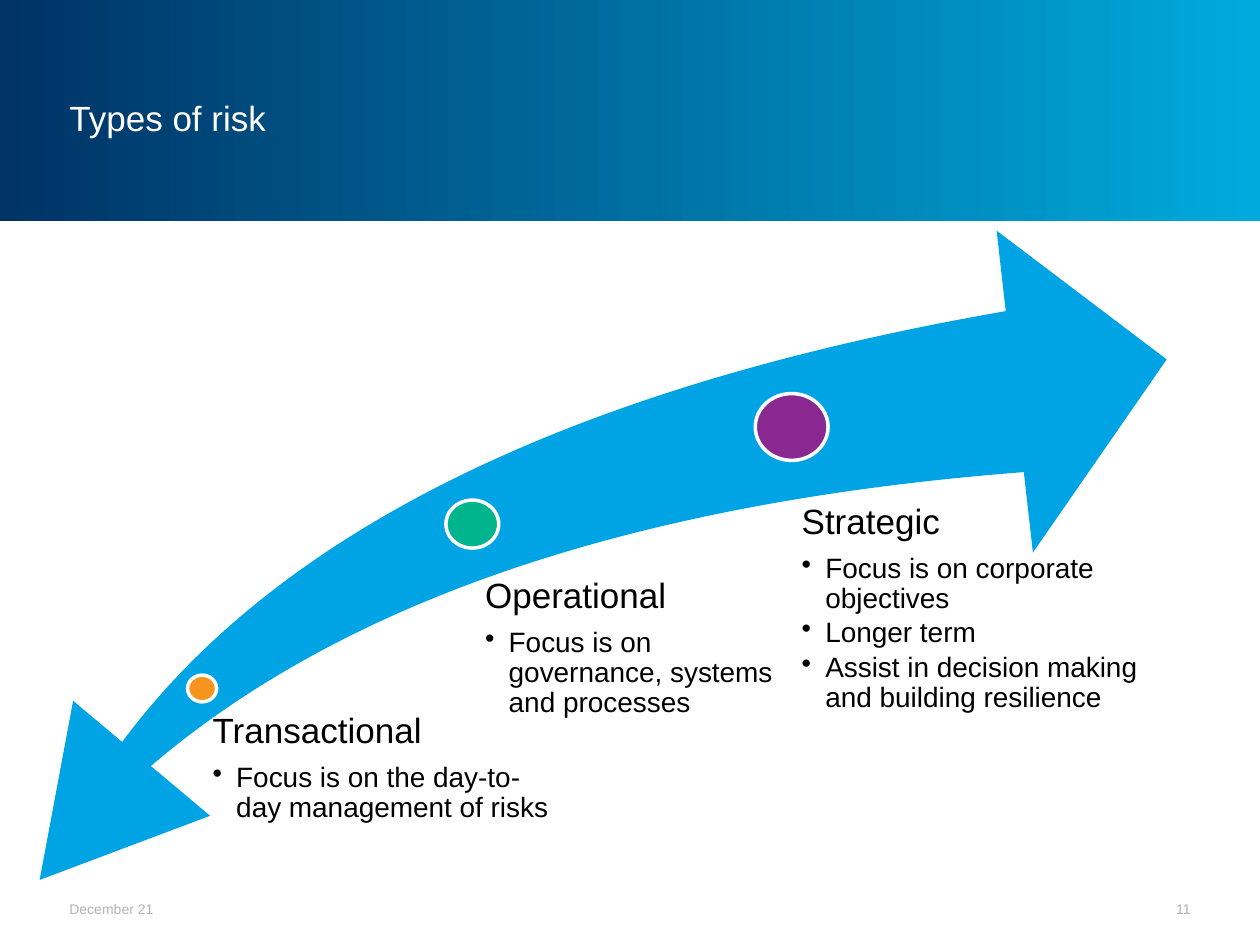
from lxml import etree
from pptx import Presentation
from pptx.dml.color import RGBColor
from pptx.enum.shapes import MSO_SHAPE
from pptx.enum.text import MSO_ANCHOR, PP_ALIGN
from pptx.oxml.ns import qn
from pptx.util import Pt

RECTANGLE, OVAL = MSO_SHAPE.RECTANGLE, MSO_SHAPE.OVAL
SWOOSH, TRIANGLE = MSO_SHAPE.SWOOSH_ARROW, MSO_SHAPE.ISOSCELES_TRIANGLE
TOP, MIDDLE = MSO_ANCHOR.TOP, MSO_ANCHOR.MIDDLE
LEFT, RIGHT = PP_ALIGN.LEFT, PP_ALIGN.RIGHT

FONT = "Arial"
WHITE, BLACK, GREY = "FFFFFF", "000000", "B4B4B4"
NAVY, CYAN, ARROW_BLUE = "003366", "00AADC", "00A4E4"
INSET = 2.9
BULLET_INDENT = 13.5

# dot box, dot colour, text box, heading, bullets
RISKS = [
    ((107.2, 385.8, 16.6, 15.3), "F7941E", (115.7, 404.7, 201.6, 73.4),
     "Transactional", ["Focus is on the day-to- day management of risks"]),
    ((254.8, 285.8, 30.2, 27.4), "00B48D", (271.4, 327.6, 193, 98.6),
     "Operational", ["Focus is on governance, systems and processes"]),
    ((431.6, 224.9, 41.6, 38.2), "892890", (452.3, 285.1, 214.6, 150.5),
     "Strategic", ["Focus is on corporate objectives", "Longer term",
                   "Assist in decision making and building resilience"]),
]


def rgb(value):
    return RGBColor.from_string(value)


def points(box):
    return [Pt(length) for length in box]


def add_filled(slide, preset, box, color, outline=None):
    shape = slide.shapes.add_shape(preset, *points(box))
    shape.shadow.inherit = False
    shape.fill.solid()
    shape.fill.fore_color.rgb = rgb(color)
    if outline:
        shape.line.color.rgb = rgb(outline)
        shape.line.width = Pt(2)
    else:
        shape.line.fill.background()
    return shape


def add_frame(slide, box, anchor, left_inset=INSET):
    frame = slide.shapes.add_textbox(*points(box)).text_frame
    settings = {
        "word_wrap": True, "vertical_anchor": anchor,
        "margin_left": Pt(left_inset), "margin_right": Pt(INSET),
        "margin_top": Pt(INSET), "margin_bottom": Pt(INSET),
    }
    for name, value in settings.items():
        setattr(frame, name, value)
    return frame


def write(paragraph, text, size, color):
    run = paragraph.add_run()
    run.text = text
    for name, value in {"name": FONT, "size": Pt(size)}.items():
        setattr(run.font, name, value)
    run.font.color.rgb = rgb(color)


def add_label(slide, box, text, size, color, align=LEFT):
    paragraph = add_frame(slide, box, MIDDLE).paragraphs[0]
    paragraph.alignment = align
    write(paragraph, text, size, color)


def make_bullet(paragraph):
    paragraph.level = 1
    properties = paragraph._p.get_or_add_pPr()
    properties.set("marL", str(Pt(BULLET_INDENT)))
    properties.set("indent", str(-Pt(BULLET_INDENT)))
    etree.SubElement(properties, qn("a:buChar")).set("char", "•")


def add_header(slide, box, title):
    left, top, width, height = box
    band = add_filled(slide, RECTANGLE, box, NAVY)
    band.fill.gradient()
    band.fill.gradient_angle = 0
    for stop, color in zip(band.fill.gradient_stops, (NAVY, CYAN)):
        stop.color.rgb = rgb(color)
    add_label(slide, (left + 36.7, top + 21.6, 538.6, 90.7), title, 20, WHITE)


def add_footer(slide, box, date, number):
    left, top, width, height = box
    add_label(slide, (left, top, 113, height), date, 8, GREY)
    add_label(slide, (left + width - 57, top, 57, height), number, 8, GREY, RIGHT)


def add_double_arrow(slide, box):
    """Swoosh to the upper right, with a second head at its lower left end."""
    left, top, width, height = box
    swoosh = add_filled(slide, SWOOSH, box, ARROW_BLUE)
    for index in range(2):
        swoosh.adjustments[index] = 0.25
    tail_head = (left - 25.2, top + height - 77, 102.2, 90.7)
    add_filled(slide, TRIANGLE, tail_head, ARROW_BLUE).rotation = 220


def add_risk(slide, dot_box, color, text_box, heading, bullets):
    add_filled(slide, OVAL, dot_box, color, WHITE)
    frame = add_frame(slide, text_box, TOP, 5.8)
    lines = [(heading, 20, 7)] + [(bullet, 16, 2.4) for bullet in bullets]
    for index, (text, size, space_after) in enumerate(lines):
        paragraph = frame.add_paragraph() if index else frame.paragraphs[0]
        paragraph.line_spacing = 0.9
        paragraph.space_after = Pt(space_after)
        if index:
            make_bullet(paragraph)
        write(paragraph, text, size, BLACK)


def main():
    presentation = Presentation()
    presentation.slide_width, presentation.slide_height = Pt(720), Pt(540)
    slide = presentation.slides.add_slide(presentation.slide_layouts[6])
    add_header(slide, (0, 0, 720, 126.5), "Types of risk")
    add_footer(slide, (36.7, 510.5, 646.5, 17.3), "December 21", "11")
    add_double_arrow(slide, (25.9, 131.8, 640.8, 367.9))
    for risk in RISKS:
        add_risk(slide, *risk)
    presentation.save("out.pptx")


if __name__ == "__main__":
    main()
